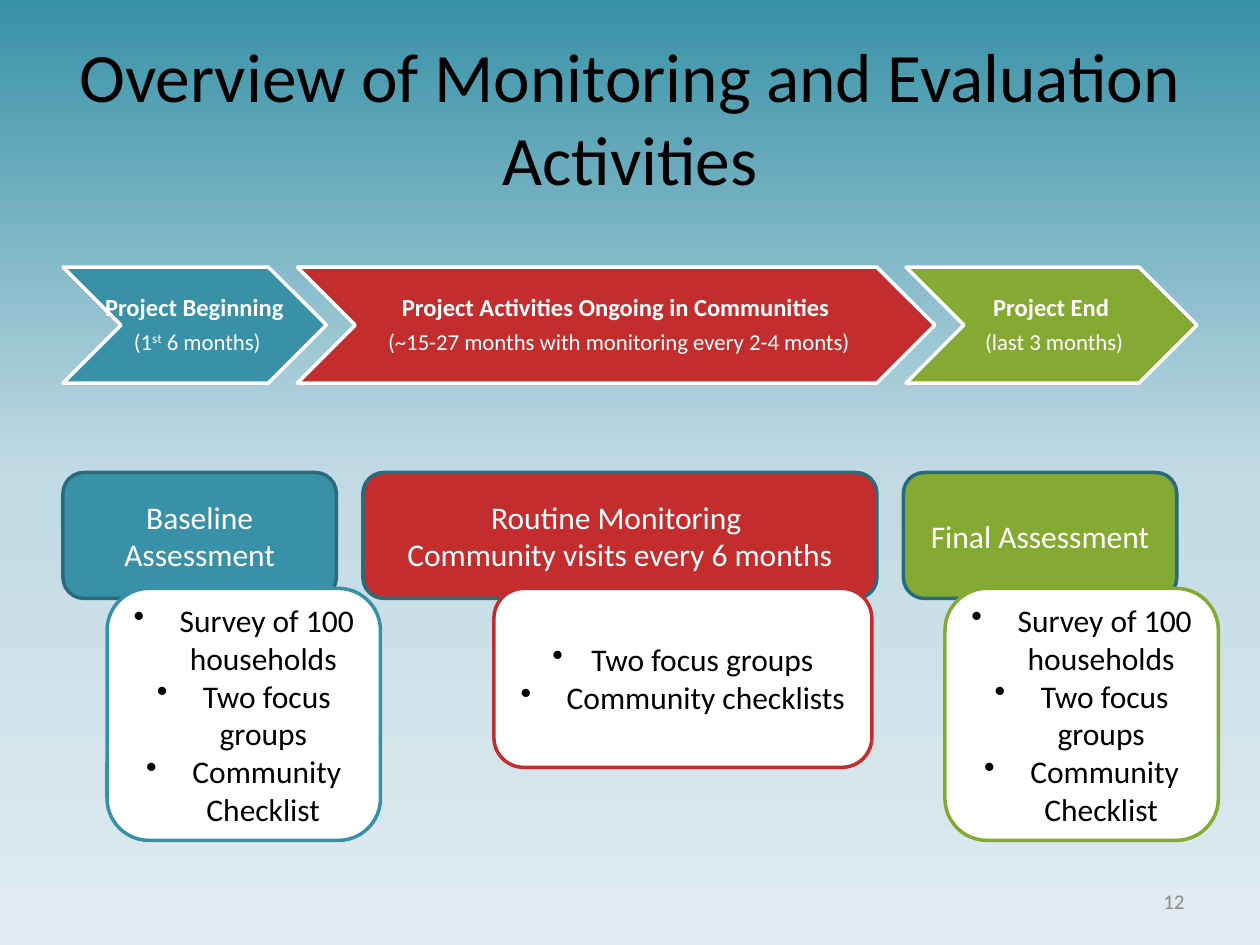
"""Build the monitoring and evaluation overview slide."""
from copy import deepcopy

from lxml import etree
from pptx import Presentation
from pptx import util as u
from pptx.dml.color import RGBColor
from pptx.enum import shapes, text
from pptx.oxml.ns import qn

TEAL = RGBColor(0x38, 0x91, 0xA7)
DARK_TEAL = RGBColor(0x29, 0x6B, 0x7C)
RED = RGBColor(0xC3, 0x2D, 0x2E)
GREEN = RGBColor(0x84, 0xAA, 0x33)
PALE = RGBColor(0xC1, 0xDA, 0xE4)
PALEST = RGBColor(0xE1, 0xEC, 0xF1)
GREY = RGBColor(0x8C, 0x8C, 0x8C)
WHITE = RGBColor(0xFF, 0xFF, 0xFF)
BLACK = RGBColor(0, 0, 0)

ALIGN = text.PP_ALIGN
SHAPE = shapes.MSO_SHAPE


class SlideBuilder:
    """Hold the style and the current slide."""

    font = "Calibri"
    line_width = u.Pt(2)
    bullet_indent = u.Inches(0.31)

    def __init__(self, page):
        self.page = page

    def background(self, *colors):
        """Fill the page from top to bottom with evenly spaced colours."""
        fill = self.page.background.fill
        fill.gradient()
        fill.gradient_angle = 270
        stops = self.page.element.find(".//" + qn("a:gsLst"))
        while len(stops) < len(colors):
            stops.append(deepcopy(stops[0]))
        for index, (stop, color) in enumerate(zip(fill.gradient_stops, colors)):
            stop.position = index / (len(colors) - 1)
            stop.color.rgb = color

    def frame(self, box, insets=(0.1, 0.05, 0.1, 0.05)):
        """Prepare a wrapped, vertically centred text frame."""
        frame = box.text_frame
        frame.word_wrap = True
        frame.vertical_anchor = text.MSO_ANCHOR.MIDDLE
        (frame.margin_left, frame.margin_top,
         frame.margin_right, frame.margin_bottom) = map(u.Inches, insets)
        return frame

    def paragraph(self, frame, index, size, color, align=ALIGN.CENTER, bold=False):
        """Return a styled paragraph, added unless it is the first."""
        para = frame.add_paragraph() if index else frame.paragraphs[0]
        para.alignment = align
        para.font.name = self.font
        para.font.size = u.Pt(size)
        para.font.bold = bold
        para.font.color.rgb = color
        return para

    def label(self, place, wording, size, color, align=ALIGN.CENTER):
        """Add a one-paragraph text box."""
        box = self.page.shapes.add_textbox(*map(u.Inches, place))
        self.paragraph(self.frame(box), 0, size, color, align).add_run().text = wording

    def shape(self, kind, place, fill, line):
        """Add a filled and outlined preset shape."""
        box = self.page.shapes.add_shape(kind, *map(u.Inches, place))
        box.shadow.inherit = False
        box.fill.solid()
        box.fill.fore_color.rgb = fill
        box.line.color.rgb = line
        box.line.width = self.line_width
        return box

    def phase(self, left, width, color, name, duration):
        """Add a timeline chevron with its name and duration parts."""
        place = (left, 2.12, width, 0.92)
        self.shape(SHAPE.CHEVRON, place, color, WHITE)
        box = self.page.shapes.add_textbox(*map(u.Inches, place))
        frame = self.frame(box, (0.06, 0.02, 0.02, 0.02))
        for index, (size, parts) in enumerate([(14, [name]), (13, duration)]):
            para = self.paragraph(frame, index, size, WHITE, bold=index == 0)
            para.line_spacing = 0.9
            para.space_after = u.Pt(5)
            for position, part in enumerate(parts):
                span = para.add_run()
                span.text = part
                if position == 1:
                    span.font._element.set("baseline", "30000")

    def card(self, place, fill, line, color, lines, bulleted=False):
        """Add a rounded box of centred lines, with bullets if asked."""
        frame = self.frame(self.shape(SHAPE.ROUNDED_RECTANGLE, place, fill, line))
        for index, wording in enumerate(lines):
            para = self.paragraph(frame, index, 18, color)
            para.add_run().text = wording
            if bulleted:
                self.bullet(para)

    def bullet(self, para):
        """Give a paragraph a round bullet with a hanging indent."""
        props = para._p.get_or_add_pPr()
        props.set("marL", str(self.bullet_indent))
        props.set("indent", str(-self.bullet_indent))
        mark = etree.Element(qn("a:buChar"), char="•")
        props.find(qn("a:defRPr")).addprevious(mark)


def main():
    """Compose and save the slide."""
    deck = Presentation()
    deck.slide_width, deck.slide_height = u.Inches(10), u.Inches(7.5)
    slide = SlideBuilder(deck.slides.add_slide(deck.slide_layouts[6]))
    slide.background(TEAL, PALE, PALEST)
    slide.label((7.17, 6.95, 2.33, 0.4), "12", 12, GREY, ALIGN.RIGHT)
    slide.label((0.5, 0.3, 9, 1.25),
                "Overview of Monitoring and Evaluation Activities", 39.6, BLACK)

    phases = [
        (0.5, 2.09, TEAL, "Project Beginning ", ["(1", "st", " 6 months)"]),
        (2.36, 5.06, RED, "Project Activities Ongoing in Communities ",
         ["(~15-27 months with monitoring every 2-4 monts)"]),
        (7.19, 2.31, GREEN, "Project End ", ["(last 3 months)"]),
    ]
    for phase in phases:
        slide.phase(*phase)

    assessment = [" Survey of 100 households", " Two focus groups",
                  " Community Checklist"]
    routine = ["Two focus groups", " Community checklists"]
    stages = [
        (TEAL, 0.5, 2.17, ["Baseline Assessment"],
         (0.85, 4.67, 2.17, 2), assessment),
        (RED, 2.88, 4.08, ["Routine Monitoring ", "Community visits every 6 months"],
         (3.92, 4.67, 3, 1.42), routine),
        (GREEN, 7.17, 2.17, ["Final Assessment"],
         (7.5, 4.67, 2.17, 2), assessment),
    ]
    for color, left, width, heading, detail_place, details in stages:
        slide.card((left, 3.75, width, 1), color, DARK_TEAL, WHITE, heading)
        slide.card(detail_place, WHITE, color, BLACK, details, bulleted=True)

    deck.save("out.pptx")


if __name__ == "__main__":
    main()
